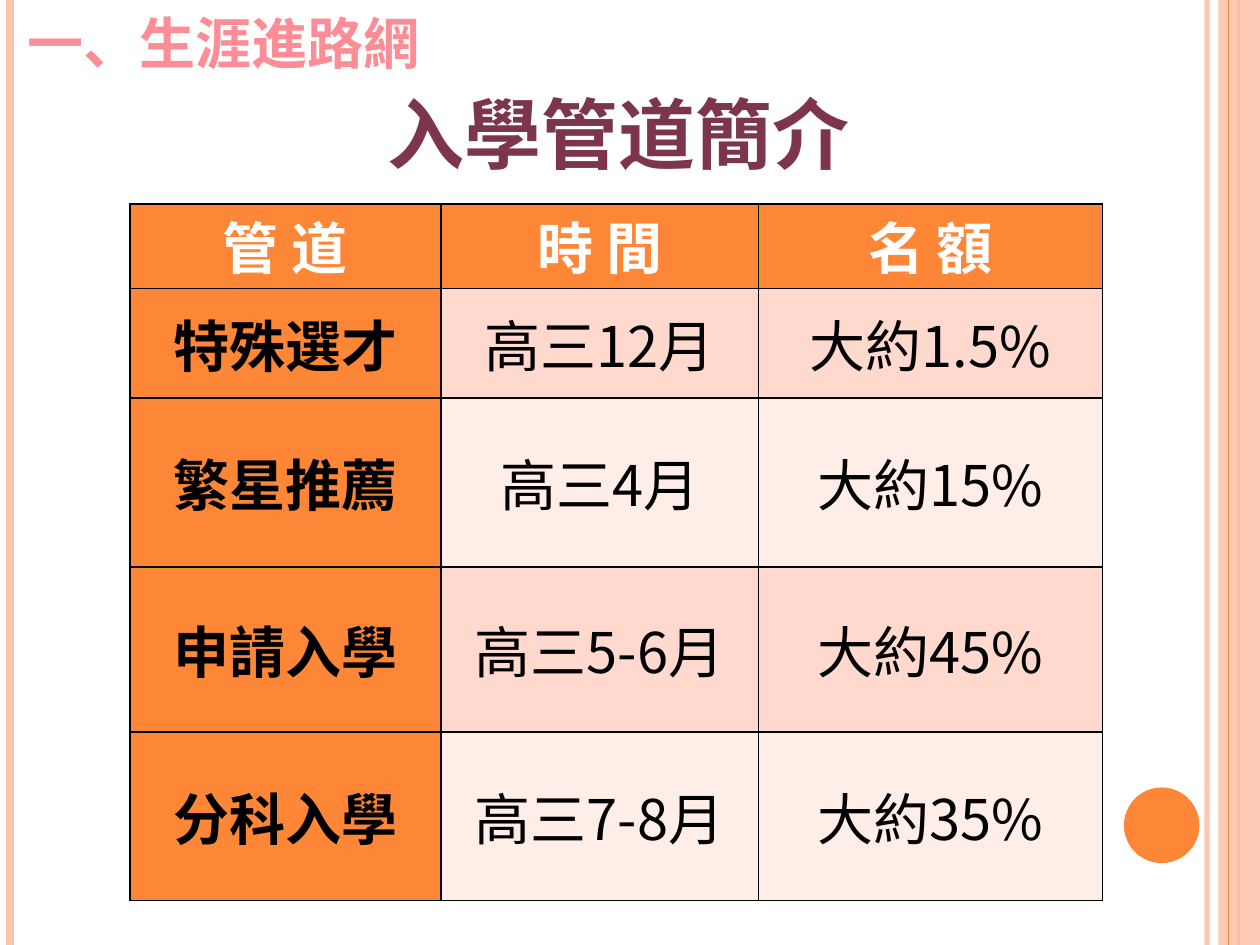
"""Build a slide with a table of school entry routes."""
from dataclasses import dataclass

from lxml import etree
from pptx import Presentation
from pptx.dml.color import RGBColor
from pptx.enum.shapes import MSO_CONNECTOR, MSO_SHAPE
from pptx.enum.text import MSO_ANCHOR, MSO_AUTO_SIZE, PP_ALIGN
from pptx.oxml.ns import qn
from pptx.util import Inches, Pt

LINE = MSO_CONNECTOR.STRAIGHT
RECT, OVAL = MSO_SHAPE.RECTANGLE, MSO_SHAPE.OVAL
LEFT, MID = PP_ALIGN.LEFT, PP_ALIGN.CENTER
TOP, CENTER = MSO_ANCHOR.TOP, MSO_ANCHOR.MIDDLE
GROW = MSO_AUTO_SIZE.SHAPE_TO_FIT_TEXT


@dataclass(frozen=True)
class Theme:
    """Hold colours, font and type sizes."""
    font: str = "Noto Sans CJK SC"
    title: int = 44
    body: int = 32
    orange: str = "FE8637"
    peach: str = "FEC3AE"
    plum: str = "7C354D"
    pink: str = "FC8D96"
    bands: tuple = ("FFD9CE", "FFEDE8")
    white: str = "FFFFFF"
    black: str = "000000"


THEME = Theme()
WIDE, HIGH = 10, 7.5
COLS = (2.47, 2.52, 2.73)
ROWS = (0.67, 0.87, 1.34, 1.31, 1.34)
ROUTES = (
    ("管 道", "時 間", "名 額"),
    ("特殊選才", "高三12月", "大約1.5%"),
    ("繁星推薦", "高三4月", "大約15%"),
    ("申請入學", "高三5-6月", "大約45%"),
    ("分科入學", "高三7-8月", "大約35%"),
)


def paint(fill, color, alpha=100):
    """Set a solid fill, with opacity in percent."""
    fill.solid()
    fill.fore_color.rgb = RGBColor.from_string(color)
    if alpha < 100:
        tone = fill._xPr.find(".//" + qn("a:srgbClr"))
        etree.SubElement(tone, qn("a:alpha"), val=str(alpha * 1000))


def write(frame, text, size, color, bold=True, align=MID):
    """Put one styled paragraph in a text frame."""
    para = frame.paragraphs[0]
    para.text, para.alignment = text, align
    font = para.font
    font.name, font.size, font.bold = THEME.font, Pt(size), bold
    font.color.rgb = RGBColor.from_string(color)
    etree.SubElement(font._element, qn("a:ea"), typeface=THEME.font)


def add_rail(slide, x, color, width, alpha=100):
    """Draw a full-height vertical line."""
    rail = slide.shapes.add_connector(
        LINE, Inches(x), Inches(0), Inches(x), Inches(HIGH))
    rail.line.width = Pt(width)
    paint(rail.line.fill, color, alpha)
    etree.SubElement(rail._element.spPr, qn("a:effectLst"))


def add_block(slide, kind, box, color, alpha=100):
    """Add a filled shape without outline."""
    shape = slide.shapes.add_shape(kind, *map(Inches, box))
    shape.shadow.inherit = False
    paint(shape.fill, color, alpha)
    shape.line.fill.background()


def add_text(slide, box, text, size, color, align=MID):
    """Add a text box and return its frame."""
    frame = slide.shapes.add_textbox(*map(Inches, box)).text_frame
    frame.word_wrap = True
    write(frame, text, size, color, align=align)
    return frame


def edge(cell):
    """Give a cell thin black borders."""
    props = cell._tc.get_or_add_tcPr()
    for side in ("lnL", "lnR", "lnT", "lnB"):
        line = etree.SubElement(props, qn("a:" + side), w=str(Pt(1)))
        fill = etree.SubElement(line, qn("a:solidFill"))
        etree.SubElement(fill, qn("a:srgbClr"), val=THEME.black)


def add_grid(slide, x, y):
    """Add the table of entry routes."""
    grid = slide.shapes.add_table(
        len(ROWS), len(COLS), Inches(x), Inches(y),
        Inches(sum(COLS)), Inches(sum(ROWS))).table
    grid.first_row = grid.horz_banding = False
    for col, width in zip(grid.columns, COLS):
        col.width = Inches(width)
    for r, (row, height) in enumerate(zip(grid.rows, ROWS)):
        row.height = Inches(height)
        for c, cell in enumerate(row.cells):
            head = r == 0 or c == 0
            cell.margin_left = cell.margin_right = Inches(0.07)
            cell.margin_top = cell.margin_bottom = 0
            cell.vertical_anchor = CENTER if r else TOP
            edge(cell)
            paint(cell.fill, THEME.orange if head else THEME.bands[(r - 1) % 2])
            write(cell.text_frame, ROUTES[r][c], THEME.body,
                  THEME.black if r else THEME.white, head)


def main():
    """Build and save the slide."""
    deck = Presentation()
    deck.slide_width, deck.slide_height = Inches(WIDE), Inches(HIGH)
    slide = deck.slides.add_slide(deck.slide_layouts[6])
    add_rail(slide, 9.58, THEME.peach, 3, 93)
    add_rail(slide, 0.08, THEME.peach, 4.5)
    add_rail(slide, 9.83, THEME.orange, 1.5)
    add_block(slide, RECT, (9.67, 0, 0.33, HIGH), THEME.peach, 87)
    add_rail(slide, 9.75, THEME.orange, 0.75)
    add_block(slide, OVAL, (8.92, 6.25, 0.6, 0.6), THEME.orange)
    add_grid(slide, 1.03, 1.62)
    add_text(slide, (2.33, 0.64, 5.16, 0.79), "入學管道簡介",
             THEME.title, THEME.plum)
    part = add_text(slide, (0.12, 0.02, 3.6, 0.64), "一、生涯進路網",
                    THEME.body, THEME.pink, LEFT)
    part.auto_size = GROW
    deck.save("out.pptx")


if __name__ == "__main__":
    main()
